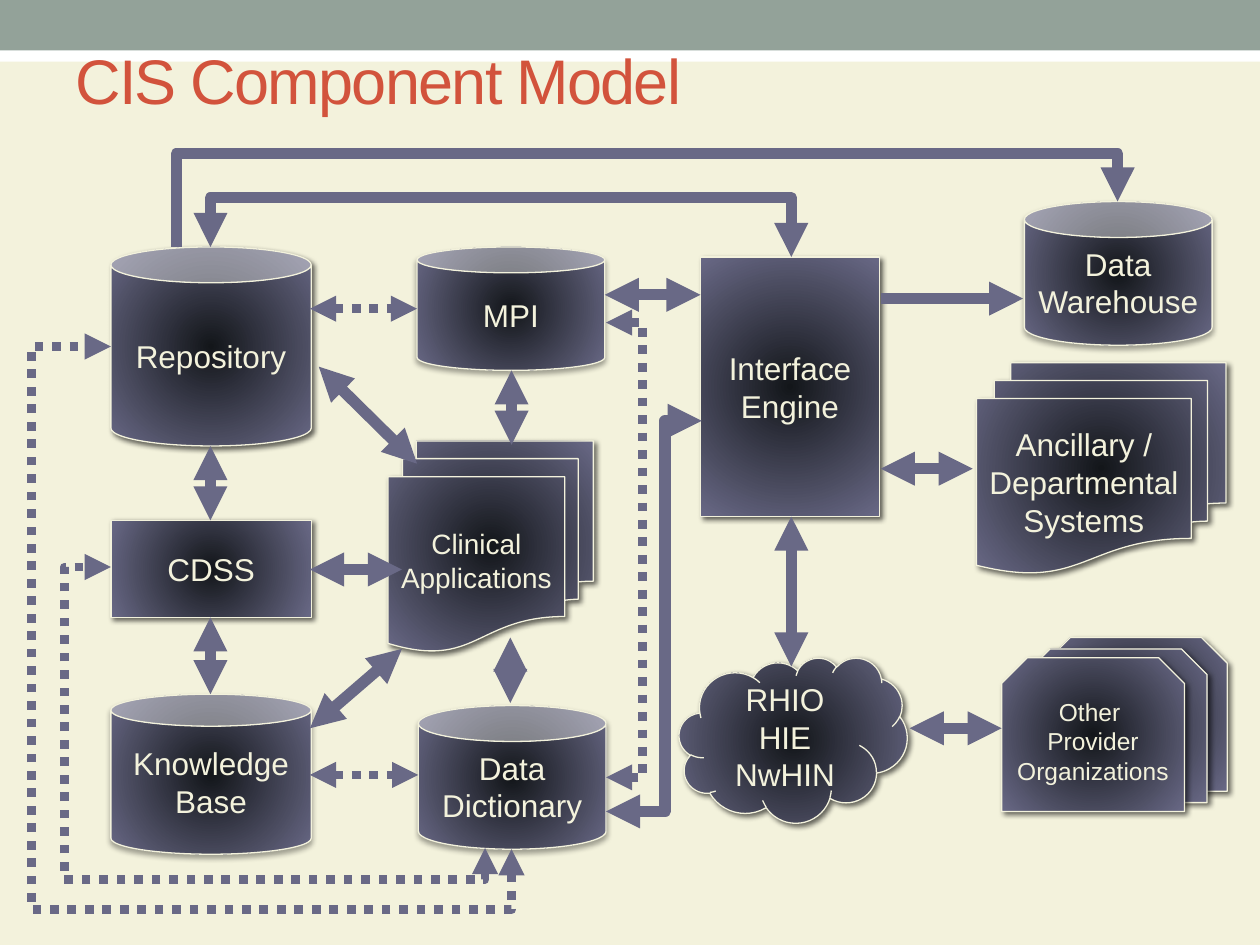
from pptx import Presentation
from pptx.dml.color import RGBColor
from pptx.enum.dml import MSO_LINE
from pptx.enum.shapes import MSO_CONNECTOR, MSO_SHAPE
from pptx.enum.text import MSO_ANCHOR, PP_ALIGN
from pptx.oxml import parse_xml
from pptx.oxml.ns import nsdecls, qn
from pptx.util import Inches, Pt

CREAM = RGBColor(0xF3, 0xF2, 0xDC)
SAGE = RGBColor(0x93, 0xA2, 0x99)
WHITE = RGBColor(0xFF, 0xFF, 0xFF)
RUST = RGBColor(0xD2, 0x53, 0x3C)
INK = RGBColor(0x13, 0x16, 0x1A)
SLATE = RGBColor(0x69, 0x69, 0x86)

DEEP = (60, 3, 2, 45)
SOFT = (35, 3.1, 1.8, 90)

NODES = [
    ("Repository", MSO_SHAPE.CAN, (0.88, 0.96, 1.59, 1.58), 18, DEEP, 0.18),
    ("CDSS", MSO_SHAPE.RECTANGLE, (0.88, 3.13, 1.59, 0.77), 18, DEEP, None),
    ("Data Dictionary", MSO_SHAPE.CAN, (3.32, 4.6, 1.49, 1.14), 18, SOFT, None),
    ("Clinical Applications", MSO_SHAPE.FLOWCHART_MULTIDOCUMENT,
     (3.08, 2.5, 1.63, 1.67), 16, DEEP, None),
    ("Interface Engine", MSO_SHAPE.RECTANGLE, (5.56, 1.04, 1.42, 2.06), 18, DEEP, None),
    ("RHIO\nHIE\nNwHIN", MSO_SHAPE.CLOUD, (5.39, 4.22, 1.81, 1.31), 18, DEEP, None),
    ("MPI", MSO_SHAPE.CAN, (3.31, 0.96, 1.49, 0.98), 18, SOFT, 0.21),
    ("Knowledge Base", MSO_SHAPE.CAN, (0.88, 4.51, 1.59, 1.27), 18, SOFT, 0.2),
    ("Ancillary / Departmental Systems", MSO_SHAPE.FLOWCHART_MULTIDOCUMENT,
     (7.75, 1.88, 1.98, 1.67), 18, DEEP, None),
    ("Data Warehouse", MSO_SHAPE.CAN, (8.13, 0.6, 1.49, 1.14), 18, SOFT, None),
]

SOLID = [
    [(4.06, 1.94), (4.06, 2.53)],
    [(6.28, 3.1), (6.28, 4.29)],
    [(1.67, 2.54), (1.67, 3.13)],
    [(6.99, 2.72), (7.72, 2.72)],
    [(7.22, 4.78), (7.95, 4.78)],
    [(1.67, 3.9), (1.67, 4.51)],
    [(2.53, 1.91), (3.31, 2.68)],
    [(4.05, 4.06), (4.05, 4.58)],
    [(2.46, 3.52), (3.19, 3.52)],
    [(4.8, 1.34), (5.56, 1.34)],
    [(2.46, 4.78), (3.19, 4.15)],
    [(5.57, 2.34), (5.28, 2.34), (5.28, 5.44), (4.81, 5.44)],
    [(6.28, 1.04), (6.28, 0.57), (1.67, 0.57), (1.67, 0.96)],
]
DOTTED = [
    [(2.46, 5.15), (3.32, 5.15)],
    [(2.46, 1.45), (3.31, 1.45)],
    [(4.06, 5.74), (4.06, 6.22), (0.25, 6.22), (0.25, 1.75), (0.88, 1.75)],
    [(4.81, 1.56), (5.1, 1.56), (5.1, 5.17), (4.81, 5.17)],
    [(3.85, 5.73), (3.85, 5.98), (0.51, 5.98), (0.51, 3.5), (0.88, 3.5)],
]
ONE_WAY = [
    [(1.4, 0.96), (1.4, 0.22), (8.87, 0.22), (8.87, 0.6)],
    [(6.99, 1.37), (8.12, 1.37)],
]


def assign(item, values):
    """Set each named value on the item."""
    for name, value in values.items():
        setattr(item, name, value)


def write(shape, text, size, color, align, inset=0.1):
    """Fill a shape with wrapped, middle-anchored text."""
    frame = shape.text_frame
    frame.text = text
    assign(frame, {"word_wrap": True, "vertical_anchor": MSO_ANCHOR.MIDDLE,
                   "margin_left": Inches(inset), "margin_right": Inches(inset)})
    for para in frame.paragraphs:
        para.alignment = align
        for run in para.runs:
            assign(run.font, {"size": Pt(size), "name": "Arial"})
            run.font.color.rgb = color


def add_node(slide, kind, box, shade, adjust=None):
    """Add a shape with a radial gradient and a drop shadow."""
    node = slide.shapes.add_shape(kind, *map(Inches, box))
    if adjust is not None:
        node.adjustments[0] = adjust
    node.line.color.rgb = CREAM
    node.line.width = Pt(0.75)
    props = node._element.spPr
    props.find(qn("a:ln")).addprevious(parse_xml(
        f'<a:gradFill {nsdecls("a")} rotWithShape="1"><a:gsLst>'
        f'<a:gs pos="0"><a:srgbClr val="{INK}"/></a:gs>'
        f'<a:gs pos="100000"><a:srgbClr val="{SLATE}"/></a:gs></a:gsLst>'
        '<a:path path="circle"><a:fillToRect l="50000" t="50000" r="50000" b="50000"/>'
        '</a:path></a:gradFill>'))
    alpha, blur, dist, angle = shade
    props.append(parse_xml(
        f'<a:effectLst {nsdecls("a")}><a:outerShdw blurRad="{Pt(blur)}" '
        f'dist="{Pt(dist)}" dir="{angle * 60000}" rotWithShape="0">'
        f'<a:srgbClr val="000000"><a:alpha val="{alpha * 1000}"/></a:srgbClr>'
        '</a:outerShdw></a:effectLst>'))
    return node


def add_link(slide, points, width=6.5, dash=None, ends=("headEnd", "tailEnd")):
    """Join the points with an arrow, straight or bent."""
    points = [(Inches(x), Inches(y)) for x, y in points]
    if len(points) == 2:
        link = slide.shapes.add_connector(MSO_CONNECTOR.STRAIGHT, *points[0], *points[1])
    else:
        outline = slide.shapes.build_freeform(*points[0])
        outline.add_line_segments(points[1:], close=False)
        link = outline.convert_to_shape()
        link.fill.background()
    link.line.color.rgb = SLATE
    assign(link.line, {"width": Pt(width), "dash_style": dash})
    props = link._element.spPr
    stroke = props.find(qn("a:ln"))
    stroke.append(parse_xml(f'<a:round {nsdecls("a")}/>'))
    for end in ends:
        stroke.append(parse_xml(f'<a:{end} {nsdecls("a")} type="triangle"/>'))
    props.append(parse_xml(f'<a:effectLst {nsdecls("a")}/>'))


def add_header(slide, box):
    """Draw the two bands and the title."""
    left, top, width, height = box
    for drop, tall, color in ((0.24, 0.25, WHITE), (0, 0.4, SAGE)):
        band = slide.shapes.add_shape(
            MSO_SHAPE.RECTANGLE, *map(Inches, (left, top + drop, width, tall)))
        band.shadow.inherit = False
        band.fill.solid()
        band.fill.fore_color.rgb = color
        band.line.fill.background()
    title = slide.shapes.add_textbox(
        *map(Inches, (left + 0.5, top + 0.21, width - 1, height - 0.21)))
    write(title, "CIS Component Model", 36, RUST, PP_ALIGN.LEFT)
    title.text_frame.paragraphs[0].runs[0].font._element.set("spc", "-100")


def add_stack(slide, box):
    """Draw the three overlapping provider cards."""
    left, top, width, height = box
    for right, drop in ((0.34, 0), (0.18, 0.09), (0, 0.16)):
        card = add_node(slide, MSO_SHAPE.SNIP_2_SAME_RECTANGLE,
                        (left + right, top + drop, width - 0.34, height - 0.16), DEEP)
    write(card, "Other \nProvider Organizations", 14, CREAM, PP_ALIGN.CENTER, 0)


def add_model(slide, box):
    """Draw the components and the links between them."""
    left, top = box[:2]
    for text, kind, (x, y, wide, tall), size, shade, adjust in NODES:
        node = add_node(slide, kind, (left + x, top + y, wide, tall), shade, adjust)
        write(node, text, size, CREAM, PP_ALIGN.CENTER)
    add_stack(slide, (left + 7.95, top + 4.06, 1.79, 1.38))
    styles = (
        (SOLID, {}),
        (DOTTED, {"width": 5, "dash": MSO_LINE.ROUND_DOT}),
        (ONE_WAY, {"ends": ("tailEnd",)}),
    )
    for routes, style in styles:
        for route in routes:
            add_link(slide, [(left + x, top + y) for x, y in route], **style)


def main():
    """Build and save the slide."""
    deck = Presentation()
    assign(deck, {"slide_width": Inches(10), "slide_height": Inches(7.5)})
    slide = deck.slides.add_slide(deck.slide_layouts[6])
    slide.background.fill.solid()
    slide.background.fill.fore_color.rgb = CREAM
    add_header(slide, (0, 0, 10, 1.05))
    add_model(slide, (0, 1, 10, 6.5))
    deck.save("out.pptx")


if __name__ == "__main__":
    main()
